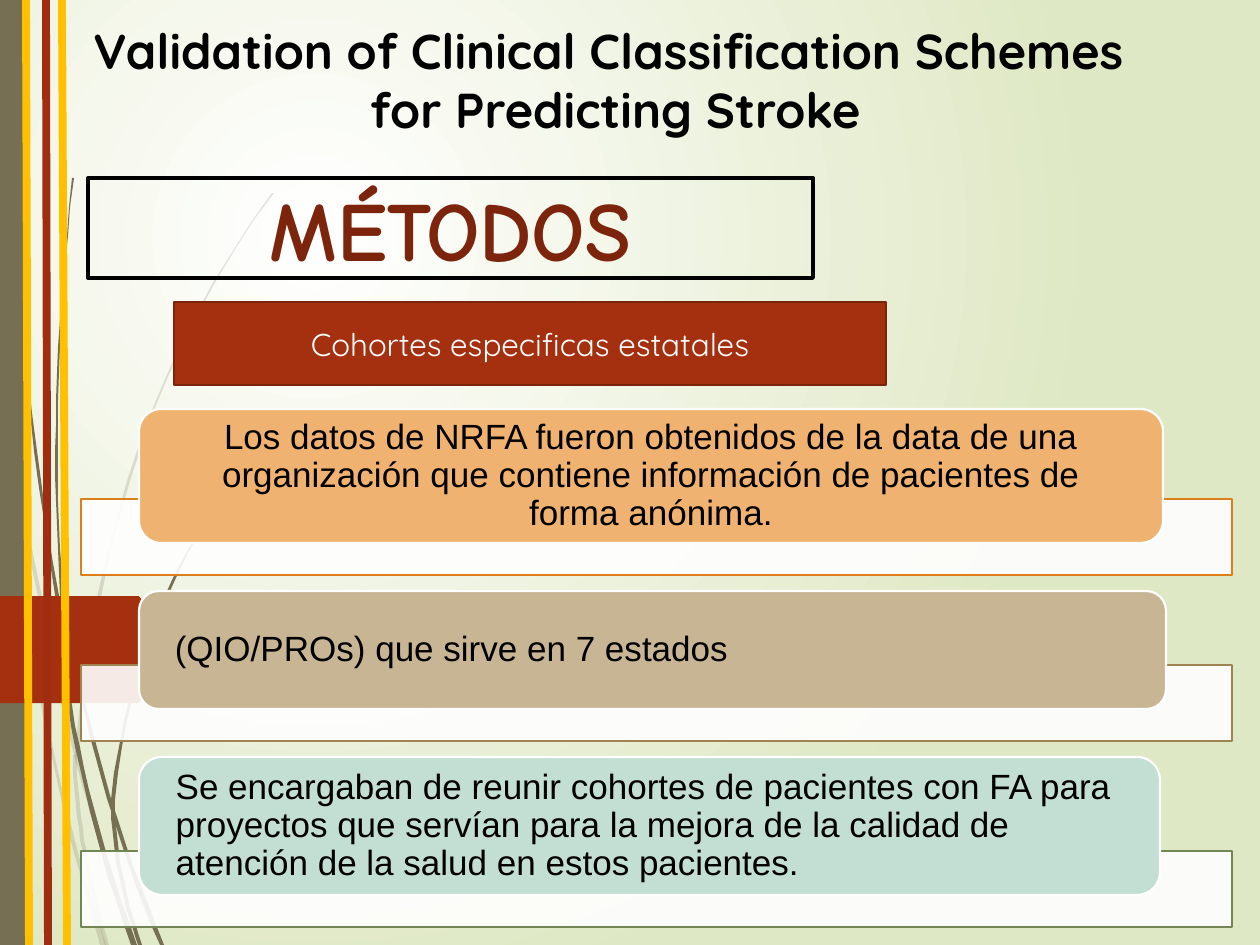
from lxml.etree import SubElement as Sub
from pptx import Presentation
from pptx.dml.color import RGBColor
from pptx.enum.shapes import MSO_CONNECTOR as Conn, MSO_SHAPE as Form
from pptx.enum.text import MSO_ANCHOR as Anchor, MSO_AUTO_SIZE as Auto, PP_ALIGN as Align
from pptx.oxml import parse_xml
from pptx.oxml.ns import qn
from pptx.util import Pt

PX = 914400 / 126
WIDE, HIGH = 1260, 945

BLACK = RGBColor(0x00, 0x00, 0x00)
WHITE = RGBColor(0xFF, 0xFF, 0xFF)
OLIVE = RGBColor(0x76, 0x6F, 0x54)
RUST = RGBColor(0xA5, 0x30, 0x10)
BRICK = RGBColor(0x9E, 0x2E, 0x0F)
MAROON = RGBColor(0x7C, 0x24, 0x0C)
EDGE = RGBColor(0x7A, 0x24, 0x0C)
GOLD = RGBColor(0xFF, 0xC0, 0x00)
ORANGE = RGBColor(0xDE, 0x7E, 0x18)
PEACH = RGBColor(0xF0, 0xB2, 0x70)
BROWN = RGBColor(0x9F, 0x83, 0x51)
TAN = RGBColor(0xC8, 0xB5, 0x94)
GREEN = RGBColor(0x72, 0x86, 0x53)
MINT = RGBColor(0xC3, 0xDE, 0xD3)

TITLE = ["Validation of Clinical Classification Schemes", " for Predicting Stroke"]
HEAD = "MÉTODOS"
LABEL = "Cohortes especificas estatales"
CARDS = [
    dict(text="Los datos de NRFA fueron obtenidos de la data de una organización que "
              "contiene información de pacientes de forma anónima.",
         align=Align.CENTER, size=(1024, 134), line=ORANGE, fill=PEACH),
    dict(text="(QIO/PROs) que sirve en 7 estados",
         align=Align.LEFT, size=(1027, 118), line=BROWN, fill=TAN),
    dict(text="Se encargaban de reunir cohortes de pacientes con FA para proyectos que "
              "servían para la mejora de la calidad de atención de la salud en estos "
              "pacientes.",
         align=Align.LEFT, size=(1021, 138), line=GREEN, fill=MINT),
]
CARD_X, CARD_Y = 139, 409
BAND_X, BAND_W, BAND_H = 81, 1151, 76
LAP, GAP, INSET = 44, 16, 30

RAILS = [(26, 29, GOLD), (62, 67, GOLD), (46, 48, BRICK)]

STEPS = 16
GRASS = [
    dict(alpha=20, blades=[
        dict(start=(0, 366), bend=(49, 704), end=(134, HIGH), width=(3, 5)),
        dict(start=(10, 441), bend=(23, 687), end=(103, HIGH), width=(1, 5)),
        dict(start=(75, 755), bend=(74, 830), end=(107, HIGH), width=(4, 4)),
        dict(start=(273, 193), bend=(106, 416), end=(77, 755), width=(1, 4)),
    ]),
    dict(alpha=100, blades=[
        dict(start=(4, 0), bend=(7, 300), end=(58, 601), width=(1, 3)),
        dict(start=(58, 601), bend=(68, 764), end=(134, HIGH), width=(3, 6)),
        dict(start=(73, 178), bend=(47, 413), end=(62, 595), width=(1, 3)),
        dict(start=(62, 595), bend=(94, 784), end=(162, HIGH), width=(3, 5)),
        dict(start=(272, 433), bend=(136, 584), end=(113, 800), width=(1, 4)),
        dict(start=(113, 800), bend=(113, 870), end=(140, HIGH), width=(4, 4)),
    ]),
]

BACK = """<p:bg xmlns:p="http://schemas.openxmlformats.org/presentationml/2006/main"
 xmlns:a="http://schemas.openxmlformats.org/drawingml/2006/main"><p:bgPr>
<a:gradFill><a:gsLst><a:gs pos="0"><a:srgbClr val="FFFFFF"/></a:gs>
<a:gs pos="100000"><a:srgbClr val="DFE8C4"/></a:gs></a:gsLst>
<a:path path="circle"><a:fillToRect l="50000" t="50000" r="100000" b="100000"/></a:path>
</a:gradFill><a:effectLst/></p:bgPr></p:bg>"""


def emu(*nums):
    return [round(n * PX) for n in nums]


def paint(shape, fill=None, line=None, width=1.25, alpha=100):
    shape.shadow.inherit = False
    if fill is None:
        shape.fill.background()
    else:
        shape.fill.solid()
        shape.fill.fore_color.rgb = fill
        if alpha < 100:
            tint = shape.fill._xPr.find(".//" + qn("a:srgbClr"))
            Sub(tint, qn("a:alpha"), val=str(alpha * 1000))
    if line is None:
        shape.line.fill.background()
    else:
        shape.line.color.rgb = line
        shape.line.width = Pt(width)


def box(form, at, **look):
    shape = slide.shapes.add_shape(form, *emu(*at))
    paint(shape, **look)
    return shape


def write(shape, text, size, font, color, bold=False, align=Align.CENTER):
    frame = shape.text_frame
    frame.text = text
    frame.word_wrap = True
    frame.vertical_anchor = Anchor.MIDDLE
    for para in frame.paragraphs:
        para.alignment = align
        for run in para.runs:
            run.font.size = Pt(size)
            run.font.name = font
            run.font.bold = bold
            run.font.color.rgb = color
    return frame


def mix(a, b, t):
    return a + (b - a) * t


def curve(start, bend, end, t):
    return [mix(mix(a, b, t), mix(b, c, t), t) for a, b, c in zip(start, bend, end)]


def grow(start, bend, end, width, alpha):
    left, right = [], []
    for step in range(STEPS + 1):
        t = step / STEPS
        x, y = curve(start, bend, end, t)
        half = mix(*width, t) / 2
        left.append((x - half, y))
        right.append((x + half, y))
    rim = left + right[::-1]
    pen = slide.shapes.build_freeform(*rim[0], scale=PX)
    pen.add_line_segments(rim[1:], close=True)
    paint(pen.convert_to_shape(), fill=OLIVE, alpha=alpha)


def rail(top, foot, color):
    bar = slide.shapes.add_connector(Conn.STRAIGHT, *emu(top, 0, foot, HIGH))
    bar.line.color.rgb = color
    bar.line.width = Pt(4.5)
    Sub(bar._element.spPr, qn("a:effectLst"))


def stack(cards, top):
    for card in cards:
        wide, high = card["size"]
        base = top + high - LAP
        box(Form.RECTANGLE, (BAND_X, base, BAND_W, BAND_H),
            fill=WHITE, line=card["line"], alpha=90)
        face = box(Form.ROUNDED_RECTANGLE, (CARD_X, top, wide, high),
                   fill=card["fill"], line=WHITE)
        frame = write(face, card["text"], 20, "Arial", BLACK, align=card["align"])
        frame.margin_left, frame.margin_right = emu(INSET, INSET)
        frame.margin_top = frame.margin_bottom = 0
        frame.paragraphs[0].line_spacing = 0.9
        top = base + BAND_H + GAP


deck = Presentation()
deck.slide_width, deck.slide_height = emu(WIDE, HIGH)
slide = deck.slides.add_slide(deck.slide_layouts[6])
slide.element.cSld.insert(0, parse_xml(BACK))

for tuft in GRASS:
    for blade in tuft["blades"]:
        grow(**blade, alpha=tuft["alpha"])
box(Form.RECTANGLE, (0, 0, 25, HIGH), fill=OLIVE)
flag = box(Form.PENTAGON, (-4, 596, 192, 107), fill=RUST)
flag.adjustments[0] = 0.46
for post in RAILS:
    rail(*post)

title = slide.shapes.add_textbox(*emu(81, 14, 1087, 131))
frame = write(title, "\n".join(TITLE), 28, "Quicksand", BLACK, bold=True)
frame.paragraphs[0].alignment = Align.LEFT
frame.vertical_anchor = Anchor.TOP
frame.word_wrap = False
frame.auto_size = Auto.SHAPE_TO_FIT_TEXT

head = box(Form.RECTANGLE, (88, 178, 725, 100), line=BLACK, width=2.25)
write(head, HEAD, 48, "Comic Neue", MAROON, bold=True)
label = box(Form.RECTANGLE, (174, 302, 712, 83), fill=RUST, line=EDGE)
write(label, LABEL, 18, "Quicksand", WHITE)

stack(CARDS, CARD_Y)

deck.save("out.pptx")
